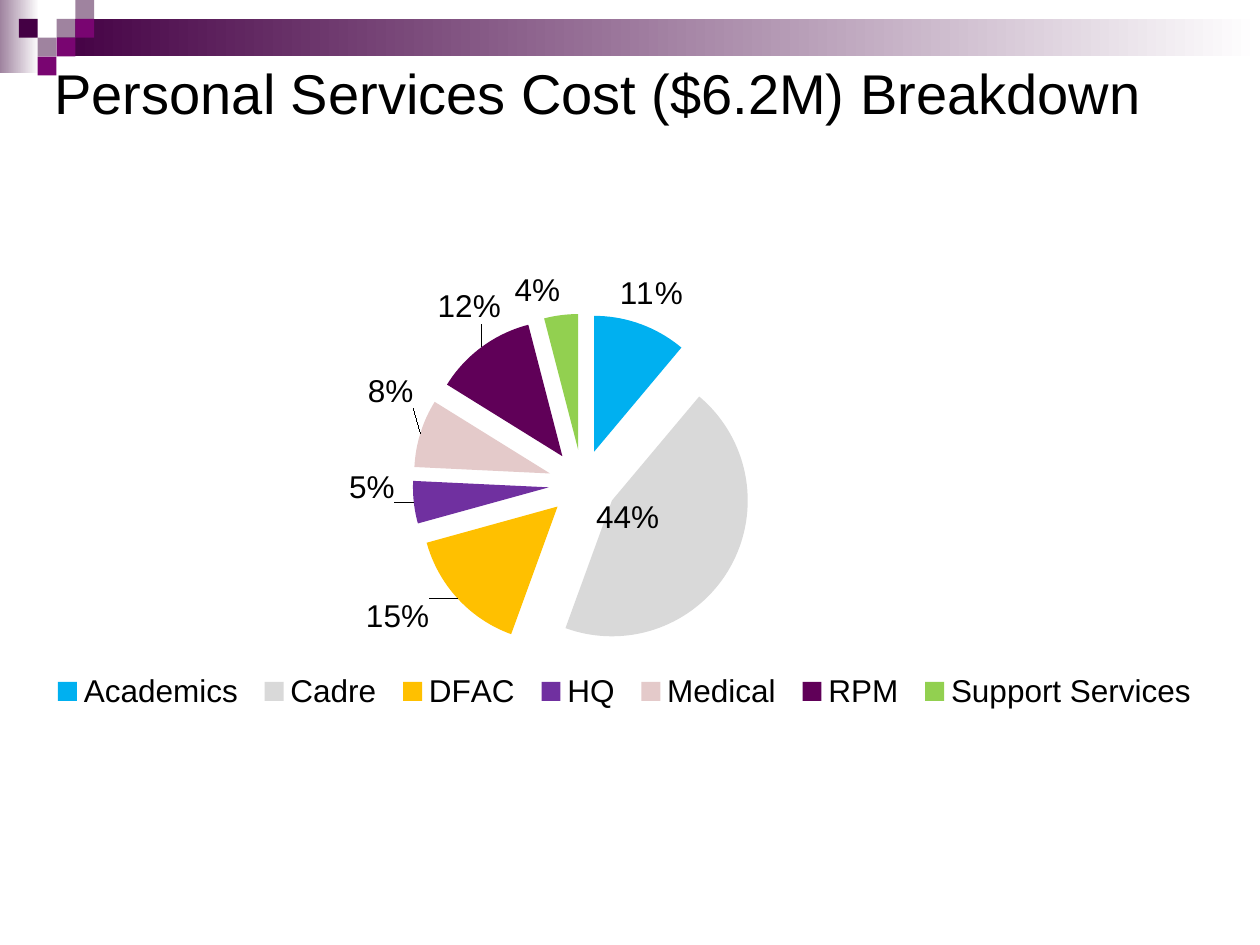
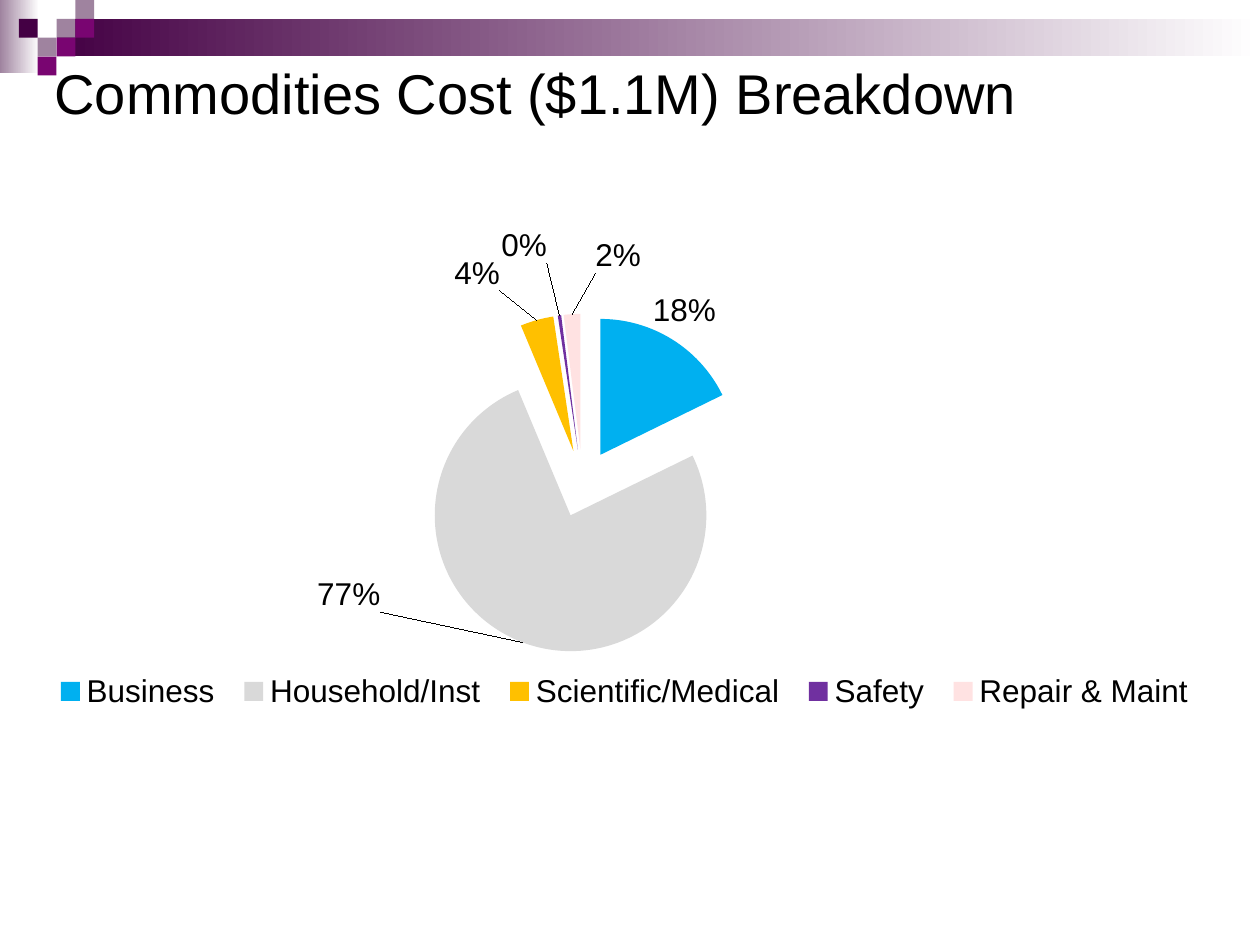
from lxml.etree import SubElement
from pptx import Presentation
from pptx.chart.data import CategoryChartData
from pptx.dml.color import RGBColor
from pptx.enum.chart import XL_CHART_TYPE, XL_LABEL_POSITION, XL_LEGEND_POSITION
from pptx.enum.shapes import MSO_SHAPE
from pptx.enum.text import MSO_ANCHOR
from pptx.oxml import parse_xml
from pptx.oxml.ns import nsdecls, qn
from pptx.util import Cm, Pt

FONT = "Arial"
BLACK, WHITE = "000000", "FFFFFF"
DARK_PURPLE, PURPLE, MAUVE = "440044", "790571", "9F839F"
BLUE, GREY, GOLD, VIOLET = "00B0F0", "D9D9D9", "FFC000", "7030A0"
PINK, DUSTY_PINK, PLUM, GREEN = "FFE2E2", "E4CACA", "600058", "92D050"

SQUARE = 0.38  # side of one mosaic square, in cm
MOSAIC = [  # column, row, colour
    (3, 1, MAUVE), (4, 0, MAUVE), (4, 1, PURPLE), (2, 2, MAUVE),
    (1, 1, DARK_PURPLE), (3, 2, PURPLE), (2, 3, PURPLE),
]
PERCENT_FORMAT = '0"%"'
EXPLOSION = 25

# Each slice: category, percentage, colour, label shift as a share of the chart
PERSONAL_SERVICES = [
    ("Academics", 11, BLUE, (-0.02, -0.01)),
    ("Cadre", 44, GREY, (-0.12, -0.13)),
    ("DFAC", 15, GOLD, (-0.02, -0.01)),
    ("HQ", 5, VIOLET, (-0.01, -0.06)),
    ("Medical", 8, DUSTY_PINK, (0, -0.04)),
    ("RPM", 12, PLUM, (0.02, -0.03)),
    ("Support Services", 4, GREEN, None),
]
COMMODITIES = [
    ("Business", 18, BLUE, (-0.02, -0.01)),
    ("Household/Inst", 77, GREY, (-0.12, -0.13)),
    ("Scientific/Medical", 4, GOLD, (-0.03, -0.04)),
    ("Safety", 0.4, VIOLET, (-0.01, -0.08)),  # a thin slice, shown as 0%
    ("Repair & Maint", 2, PINK, (0.04, -0.06)),
]


def color(hex_string):
    return RGBColor.from_string(hex_string)


def format_font(font, size, font_color=BLACK):
    font.name = FONT
    font.size = Pt(size)
    font.bold = False
    font.color.rgb = color(font_color)


def add_rectangle(slide, left, top, width, height, fill, fade_to=None):
    """Add a borderless rectangle, fading to the right if fade_to is given."""
    shape = slide.shapes.add_shape(
        MSO_SHAPE.RECTANGLE, Cm(left), Cm(top), Cm(width), Cm(height))
    shape.shadow.inherit = False
    shape.line.fill.background()
    if fade_to:
        shape.fill.gradient()
        shape.fill.gradient_angle = 0
        for stop, stop_color in zip(shape.fill.gradient_stops, (fill, fade_to)):
            stop.color.rgb = color(stop_color)
    else:
        shape.fill.solid()
        shape.fill.fore_color.rgb = color(fill)


def add_text(slide, text, left, top, width, height, size=18, font_color=BLACK):
    text_box = slide.shapes.add_textbox(Cm(left), Cm(top), Cm(width), Cm(height))
    frame = text_box.text_frame
    frame.word_wrap = True
    frame.vertical_anchor = MSO_ANCHOR.TOP
    frame.margin_left = Cm(0.26)
    frame.margin_top = Cm(0.11)
    run = frame.paragraphs[0].add_run()
    run.text = text
    format_font(run.font, size, font_color)


def add_header_band(slide):
    add_rectangle(slide, 0, 0, 0.79, 1.47, MAUVE, fade_to=WHITE)
    add_rectangle(slide, 3 * SQUARE, SQUARE, 25.4 - 3 * SQUARE, 2 * SQUARE,
                  DARK_PURPLE, fade_to=WHITE)
    for column, row, fill in MOSAIC:
        add_rectangle(slide, column * SQUARE, row * SQUARE, SQUARE, SQUARE, fill)


def manual_layout(**settings):
    """Build a c:layout element from settings given in schema order."""
    layout = parse_xml(f"<c:layout {nsdecls('c')}><c:manualLayout/></c:layout>")
    for name, value in settings.items():
        SubElement(layout[0], qn(f"c:{name}")).set("val", str(value))
    return layout


def place_plot_and_legend(chart):
    plot_area = chart._chartSpace.chart.plotArea
    for layout in plot_area.findall(qn("c:layout")):
        plot_area.remove(layout)
    plot_area.insert(0, manual_layout(
        layoutTarget="inner", xMode="edge", yMode="edge",
        x=0.01, y=0.185, w=0.908, h=0.607))

    chart.has_legend = True
    legend = chart.legend
    legend.position = XL_LEGEND_POSITION.BOTTOM
    legend.include_in_layout = False
    format_font(legend.font, 18)
    for layout in legend._element.findall(qn("c:layout")):
        legend._element.remove(layout)
    legend._element.find(qn("c:legendPos")).addnext(manual_layout(
        xMode="edge", yMode="edge", x=0, y=0.81, w=1, h=0.1))


def format_labels(labels):
    labels.show_value = True
    labels.number_format = PERCENT_FORMAT
    labels.number_format_is_linked = False
    labels.position = XL_LABEL_POSITION.OUTSIDE_END
    format_font(labels.font, 18)


def shift_label(series, index, shift):
    """Move one slice label away from its automatic place."""
    label = series.points[index].data_label
    label.position = XL_LABEL_POSITION.OUTSIDE_END
    format_font(label.font, 18)
    element = series._element.find(qn("c:dLbls")).xpath(
        f"c:dLbl[c:idx/@val='{index}']")[0]
    number_format = parse_xml(f"<c:numFmt {nsdecls('c')} sourceLinked='0'/>")
    number_format.set("formatCode", PERCENT_FORMAT)
    element.find(qn("c:idx")).addnext(number_format)
    number_format.addprevious(manual_layout(x=shift[0], y=shift[1]))


def explode(series):
    """Pull out all slices, for the series and for each formatted point."""
    def explosion():
        return parse_xml(f"<c:explosion {nsdecls('c')} val='{EXPLOSION}'/>")

    points = series._element.findall(qn("c:dPt"))
    points[0].addprevious(explosion())
    for point in points:
        point.find(qn("c:spPr")).addprevious(explosion())


def add_exploded_pie(slide, slices):
    data = CategoryChartData(number_format=PERCENT_FORMAT)
    data.categories = [name for name, *_ in slices]
    data.add_series("Series 1", [value for _, value, *_ in slices])
    chart = slide.shapes.add_chart(
        XL_CHART_TYPE.PIE, Cm(0.84), Cm(4.24), Cm(23.5), Cm(11.28), data).chart
    chart.has_title = False
    format_font(chart.font, 18)
    place_plot_and_legend(chart)

    plot = chart.plots[0]
    plot.vary_by_categories = True
    series = plot.series[0]
    format_labels(series.data_labels)
    for index, (_, _, fill, shift) in enumerate(slices):
        slice_format = series.points[index].format
        slice_format.fill.solid()
        slice_format.fill.fore_color.rgb = color(fill)
        slice_format.line.fill.background()
        if shift:
            shift_label(series, index, shift)
    explode(series)


def add_breakdown_slide(presentation, title, slices):
    slide = presentation.slides.add_slide(presentation.slide_layouts[6])
    add_header_band(slide)
    add_text(slide, title, 0.84, 1.07, 24.13, 2.11, size=32)
    add_exploded_pie(slide, slices)


def main():
    presentation = Presentation()
    presentation.slide_width = Cm(25.4)
    presentation.slide_height = Cm(19.05)
    add_breakdown_slide(
        presentation, "Personal Services Cost ($6.2M) Breakdown", PERSONAL_SERVICES)
    add_breakdown_slide(
        presentation, "Commodities Cost ($1.1M) Breakdown", COMMODITIES)
    presentation.save("out.pptx")


if __name__ == "__main__":
    main()
